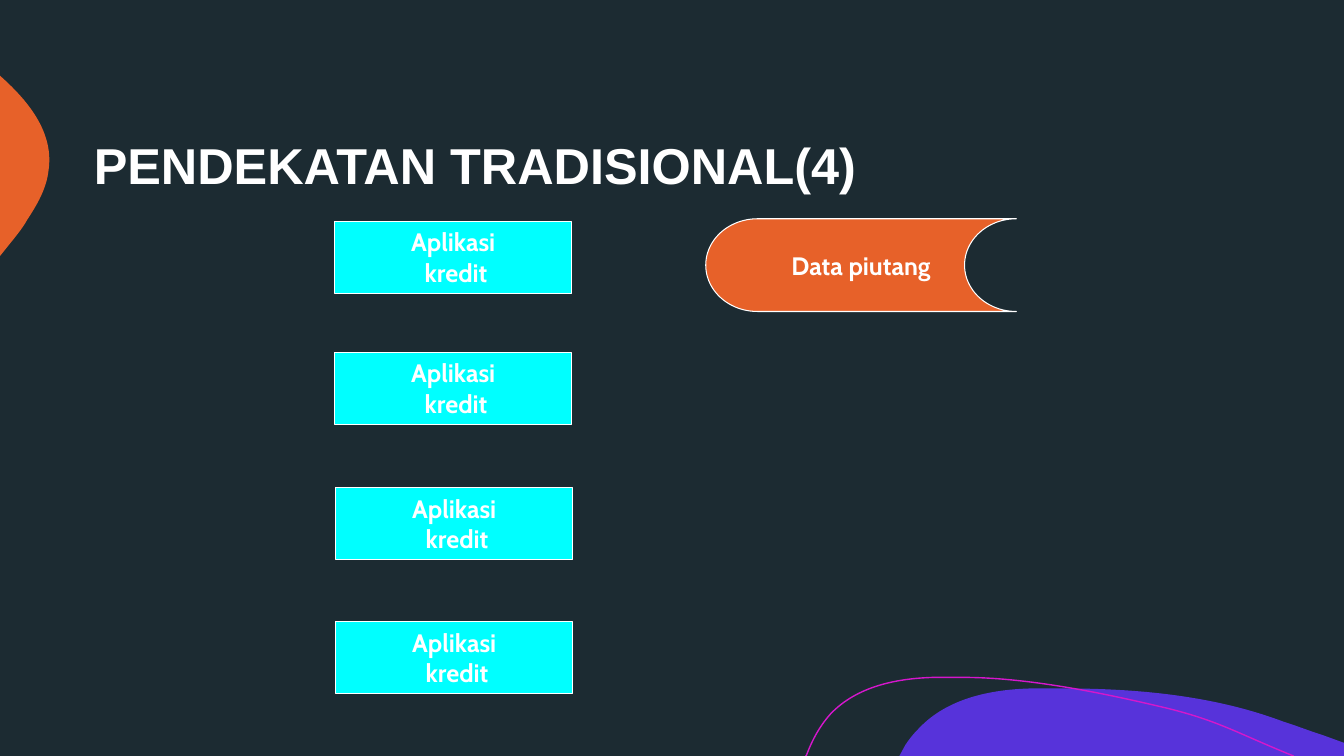
from lxml import etree
from pptx import Presentation
from pptx.dml.color import RGBColor
from pptx.enum.shapes import MSO_SHAPE
from pptx.enum.text import MSO_ANCHOR, MSO_AUTO_SIZE, PP_ALIGN
from pptx.oxml.ns import qn
from pptx.util import Pt

PX = 9144
TITLE_ONLY = 5

DARK = RGBColor(0x1C, 0x2B, 0x32)
WHITE = RGBColor(0xFF, 0xFF, 0xFF)
CYAN = RGBColor(0x00, 0xFF, 0xFF)
ORANGE = RGBColor(0xE7, 0x61, 0x29)
PURPLE = RGBColor(0x57, 0x33, 0xDA)
MAGENTA = RGBColor(0xD5, 0x17, 0xCC)

RECTANGLE = MSO_SHAPE.RECTANGLE
STORAGE = MSO_SHAPE.FLOWCHART_STORED_DATA
TOP, MIDDLE = MSO_ANCHOR.TOP, MSO_ANCHOR.MIDDLE
LEFT, CENTER = PP_ALIGN.LEFT, PP_ALIGN.CENTER
NO_FIT = MSO_AUTO_SIZE.NONE

PURPLE_WAVE = [
    [(1054, 683)],
    [(1128, 683), (1204, 690), (1273, 716)],
    [(1286, 720), (1298, 725), (1311, 729)],
    [(1333, 737)], [(1333, 750)], [(892, 750)], [(898, 739)],
    [(902, 733), (906, 728), (911, 723)],
    [(939, 693), (982, 684), (1023, 683)],
    [(1033, 683), (1043, 683), (1054, 683)],
]
ORANGE_BULGE = [
    [(0, 75)], [(1, 76)],
    [(30, 102), (54, 133), (48, 170)],
    [(46, 187), (37, 203), (27, 218)],
    [(24, 224), (17, 233), (8, 244)],
    [(0, 254)],
]
MAGENTA_CURVE = [
    [(799, 750)], [(800, 749)],
    [(806, 733), (814, 719), (824, 708)],
    [(850, 681), (889, 673), (926, 672)],
    [(955, 672)],
    [(1022, 672), (1100, 689), (1155, 702)],
    [(1209, 715), (1226, 727), (1283, 750)],
]


def apply_format(target, values):
    for name, value in values.items():
        setattr(target, name, value)


def paint(shape, fill=None, line=None, width=0.75):
    shape.shadow.inherit = False
    if fill is None:
        shape.fill.background()
    else:
        shape.fill.solid()
        shape.fill.fore_color.rgb = fill
    if line is None:
        shape.line.fill.background()
    else:
        shape.line.color.rgb = line
        shape.line.width = Pt(width)


def bend_segments(outline, segments):
    ends = [segment[-1] for segment in segments]
    left, top = (min(values) for values in zip(*ends))
    straights = list(outline.element.iter(qn("a:lnTo")))
    for straight, segment in zip(straights, segments[1:]):
        if len(segment) == 3:
            curve = etree.Element(qn("a:cubicBezTo"))
            for x, y in segment:
                etree.SubElement(curve, qn("a:pt"), x=str(x - left), y=str(y - top))
            straight.getparent().replace(straight, curve)


def add_outline(slide, segments, fill=None, line=None, width=1):
    ends = [segment[-1] for segment in segments]
    builder = slide.shapes.build_freeform(*ends[0], scale=PX)
    builder.add_line_segments(ends[1:], close=fill is not None)
    outline = builder.convert_to_shape()
    bend_segments(outline, segments)
    paint(outline, fill, line, width)


def write_lines(frame, lines, font, paragraph_format, frame_format):
    apply_format(frame, frame_format)
    for index, text in enumerate(lines):
        paragraph = frame.paragraphs[0] if index == 0 else frame.add_paragraph()
        apply_format(paragraph, paragraph_format)
        run = paragraph.add_run()
        run.text = text
        apply_format(run.font, {"bold": True, **font})
        run.font.color.rgb = WHITE


def add_title(slide, text):
    title = slide.shapes.title
    apply_format(title, {"left": 83 * PX, "top": 83 * PX,
                         "width": 1167 * PX, "height": 167 * PX})
    write_lines(title.text_frame, [text], {"name": "Arial", "size": Pt(36)},
                {"alignment": LEFT, "line_spacing": 0.9},
                {"vertical_anchor": MIDDLE, "auto_size": NO_FIT})


def add_node(slide, kind, box, lines, fill, anchor, wrap):
    node = slide.shapes.add_shape(kind, *(value * PX for value in box))
    paint(node, fill, WHITE)
    write_lines(node.text_frame, lines, {"name": "Cabin", "size": Pt(18)},
                {"alignment": CENTER},
                {"vertical_anchor": anchor, "word_wrap": wrap})


def main():
    deck = Presentation()
    deck.slide_width, deck.slide_height = 1333 * PX, 750 * PX
    slide = deck.slides.add_slide(deck.slide_layouts[TITLE_ONLY])
    slide.background.fill.solid()
    slide.background.fill.fore_color.rgb = DARK

    add_outline(slide, PURPLE_WAVE, fill=PURPLE)
    add_outline(slide, ORANGE_BULGE, fill=ORANGE)
    add_outline(slide, MAGENTA_CURVE, line=MAGENTA)
    add_title(slide, "PENDEKATAN TRADISIONAL(4)")
    for left, top in ((332, 220), (332, 350), (333, 484), (333, 617)):
        add_node(slide, RECTANGLE, (left, top, 235, 71),
                 ["Aplikasi", " kredit"], CYAN, TOP, True)
    add_node(slide, STORAGE, (700, 217, 308, 92),
             ["Data piutang"], ORANGE, MIDDLE, False)
    deck.save("out.pptx")


if __name__ == "__main__":
    main()
